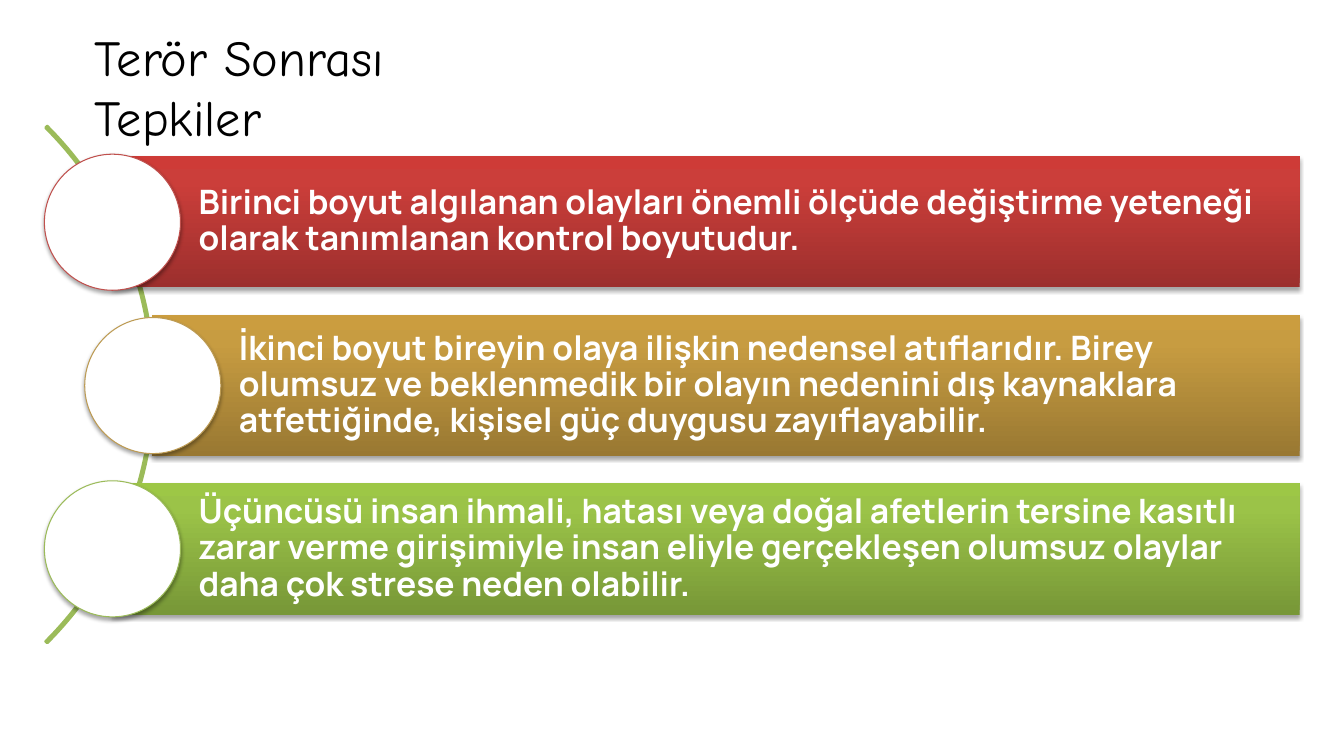
from copy import deepcopy
from dataclasses import dataclass

from lxml import etree
from pptx import Presentation
from pptx import util as u
from pptx.dml.color import RGBColor
from pptx.enum import shapes, text
from pptx.oxml.ns import qn

PX = 9144
WHITE = RGBColor(0xFF, 0xFF, 0xFF)
BLACK = RGBColor(0x00, 0x00, 0x00)
RED = RGBColor(0xC0, 0x50, 0x4D)
GOLD = RGBColor(0xBD, 0x9B, 0x53)
GREEN = RGBColor(0x9B, 0xBB, 0x59)
RED_SHADES = (RGBColor(0x9C, 0x2F, 0x2D), RGBColor(0xCB, 0x3E, 0x3A), RGBColor(0xCE, 0x3B, 0x37))
GOLD_SHADES = (RGBColor(0x99, 0x78, 0x32), RGBColor(0xC7, 0x9C, 0x41), RGBColor(0xCB, 0x9D, 0x3F))
GREEN_SHADES = (RGBColor(0x77, 0x97, 0x37), RGBColor(0x9B, 0xC3, 0x48), RGBColor(0x9D, 0xC7, 0x46))
SHADE_POSITIONS = (0, 0.8, 1)

BAR_RIGHT = 1289
CIRCLE_SIZE = 135
FIRST_CENTER = 220
CENTER_STEP = 162


@dataclass(frozen=True)
class Dimension:
    wording: str
    left: int
    height: int
    shades: tuple[RGBColor, ...]
    outline: RGBColor


DIMENSIONS = (
    Dimension(
        "Birinci boyut algılanan olayları önemli ölçüde değiştirme yeteneği "
        "olarak tanımlanan kontrol boyutudur.",
        111, 130, RED_SHADES, RED,
    ),
    Dimension(
        "İkinci boyut bireyin olaya ilişkin nedensel atıflarıdır. Birey olumsuz ve "
        "beklenmedik bir olayın nedenini dış kaynaklara atfettiğinde, kişisel güç "
        "duygusu zayıflayabilir.",
        151, 139, GOLD_SHADES, GOLD,
    ),
    Dimension(
        "Üçüncüsü insan ihmali, hatası veya doğal afetlerin tersine kasıtlı zarar "
        "verme girişimiyle insan eliyle gerçekleşen olumsuz olaylar daha çok strese "
        "neden olabilir.",
        111, 131, GREEN_SHADES, GREEN,
    ),
)


def px(*lengths: int) -> list[u.Emu]:
    return [u.Emu(length * PX) for length in lengths]


def write(shape, wording: str, *, font: str, size: int, color: RGBColor,
          bold: bool = False, spacing: float = 1.0,
          anchor=text.MSO_ANCHOR.TOP, insets=(10, 5, 10, 5)) -> None:
    frame = shape.text_frame
    frame.word_wrap = True
    frame.vertical_anchor = anchor
    (frame.margin_left, frame.margin_top,
     frame.margin_right, frame.margin_bottom) = px(*insets)
    paragraph = frame.paragraphs[0]
    paragraph.alignment = text.PP_ALIGN.LEFT
    paragraph.line_spacing = spacing
    run = paragraph.add_run()
    run.text = wording
    run.font.name = font
    run.font.size = u.Pt(size)
    run.font.bold = bold
    run.font.color.rgb = color


def add_shadow(shape) -> None:
    shape.shadow.inherit = False
    effects = shape._element.spPr.find(qn("a:effectLst"))
    shadow = etree.SubElement(
        effects, qn("a:outerShdw"), blurRad=str(u.Pt(3.1)), dist=str(u.Pt(1.8)),
        dir="5400000", rotWithShape="0",
    )
    tint = etree.SubElement(shadow, qn("a:srgbClr"), val=str(BLACK))
    etree.SubElement(tint, qn("a:alpha"), val="35000")


def shade(shape, shades: tuple[RGBColor, ...]) -> None:
    shape.fill.gradient()
    shape.fill.gradient_angle = 90
    stops = shape._element.spPr.find(qn("a:gradFill")).find(qn("a:gsLst"))
    stops.append(deepcopy(stops[0]))
    for stop, position, color in zip(shape.fill.gradient_stops, SHADE_POSITIONS, shades):
        stop.position = position
        stop.color.rgb = color


def add_arc(slide) -> None:
    arc = slide.shapes.add_shape(shapes.MSO_SHAPE.BLOCK_ARC, *px(-572, 19, 725, 725))
    for index, value in enumerate((189, 27, 0.003)):
        arc.adjustments[index] = value
    arc.shadow.inherit = False
    arc.fill.background()
    arc.line.color.rgb = GREEN
    arc.line.width = u.Pt(2)


def add_dimension(slide, dimension: Dimension, center: int) -> None:
    bar = slide.shapes.add_shape(
        shapes.MSO_SHAPE.RECTANGLE,
        *px(dimension.left, center - dimension.height // 2,
            BAR_RIGHT - dimension.left, dimension.height),
    )
    shade(bar, dimension.shades)
    bar.line.fill.background()
    add_shadow(bar)
    write(bar, dimension.wording, font="Manrope", size=24, color=WHITE, bold=True,
          spacing=0.9, anchor=text.MSO_ANCHOR.MIDDLE, insets=(86, 7, 7, 7))

    circle = slide.shapes.add_shape(
        shapes.MSO_SHAPE.OVAL,
        *px(dimension.left - CIRCLE_SIZE // 2, center - CIRCLE_SIZE // 2,
            CIRCLE_SIZE, CIRCLE_SIZE),
    )
    circle.fill.solid()
    circle.fill.fore_color.rgb = WHITE
    circle.line.color.rgb = dimension.outline
    circle.line.width = u.Pt(0.75)
    add_shadow(circle)


def main() -> None:
    deck = Presentation()
    deck.slide_width, deck.slide_height = px(1333, 750)
    slide = deck.slides.add_slide(deck.slide_layouts[6])

    title = slide.shapes.add_textbox(*px(84, 21, 417, 71))
    write(title, "Terör Sonrası Tepkiler", font="Comic Neue", size=36, color=BLACK)

    add_arc(slide)
    for index, dimension in enumerate(DIMENSIONS):
        add_dimension(slide, dimension, FIRST_CENTER + index * CENTER_STEP)
    deck.save("out.pptx")


if __name__ == "__main__":
    main()
